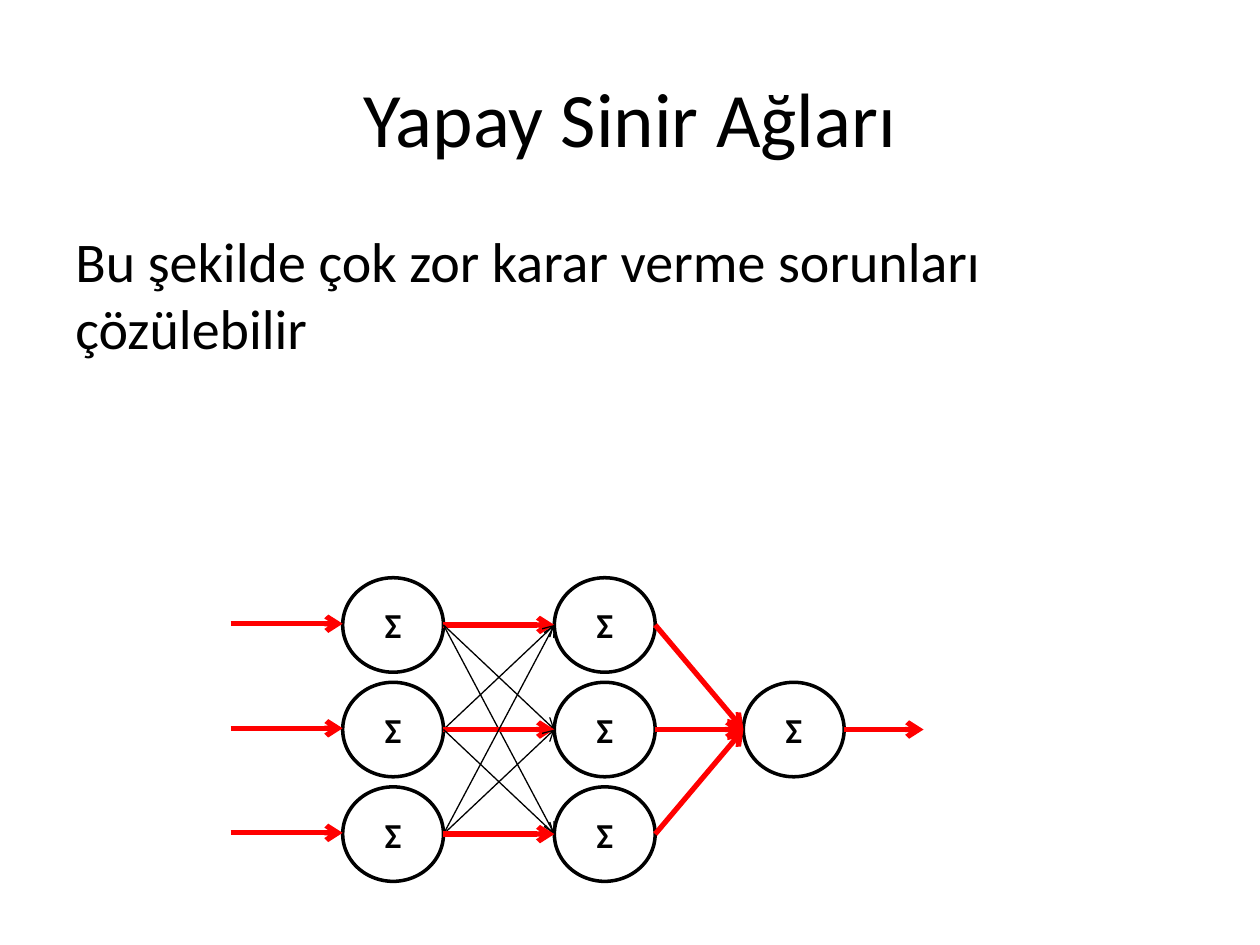
from dataclasses import dataclass

from lxml import etree
from pptx import Presentation
from pptx.dml.color import RGBColor
from pptx.enum import shapes, text
from pptx.oxml import ns
from pptx.util import Inches, Pt


@dataclass(frozen=True)
class Theme:
    font: str = "Calibri"
    ink: RGBColor = RGBColor(0, 0, 0)
    paper: RGBColor = RGBColor(255, 255, 255)
    signal: RGBColor = RGBColor(255, 0, 0)
    title: Pt = Pt(44)
    body: Pt = Pt(32)
    node: Pt = Pt(20)
    outline: Pt = Pt(2)
    thin: Pt = Pt(0.75)
    thick: Pt = Pt(3)


theme = Theme()


def write(sp, content, size, align, anchor, bold=False):
    tf = sp.text_frame
    tf.word_wrap = True
    tf.vertical_anchor = anchor
    p = tf.paragraphs[0]
    p.text = content
    p.alignment = align
    p.font.name, p.font.size, p.font.bold = theme.font, size, bold
    p.font.color.rgb = theme.ink


def arrow(x1, y1, x2, y2, strong=True):
    c = s.shapes.add_connector(shapes.MSO_CONNECTOR.STRAIGHT,
                               Inches(x1), Inches(y1), Inches(x2), Inches(y2))
    c.line.color.rgb = theme.signal if strong else theme.ink
    c.line.width = theme.thick if strong else theme.thin
    etree.SubElement(c.line._get_or_add_ln(), ns.qn("a:tailEnd"), type="arrow")
    etree.SubElement(c._element.spPr, ns.qn("a:effectLst"))


prs = Presentation()
prs.slide_width, prs.slide_height = Inches(10), Inches(7.5)
s = prs.slides.add_slide(prs.slide_layouts[6])

# Title and statement
sp = s.shapes.add_textbox(Inches(0.5), Inches(0.3), Inches(9), Inches(1.25))
write(sp, "Yapay Sinir Ağları", theme.title,
      text.PP_ALIGN.CENTER, text.MSO_ANCHOR.MIDDLE)
sp = s.shapes.add_textbox(Inches(0.5), Inches(1.75), Inches(9), Inches(2.58))
write(sp, "Bu şekilde çok zor karar verme sorunları çözülebilir", theme.body,
      text.PP_ALIGN.LEFT, text.MSO_ANCHOR.TOP)

# Network geometry: left edge of each layer and centre line of each row
node_w, node_h = 0.8, 0.75
input_x, hidden_x, output_x = 2.72, 4.4, 5.9
rows = [4.96 + 0.83 * i for i in range(3)]
middle = rows[1]

# Neurons
nodes = [(x, y) for x in (input_x, hidden_x) for y in rows]
for x, y in nodes + [(output_x, middle)]:
    sp = s.shapes.add_shape(shapes.MSO_SHAPE.OVAL, Inches(x),
                            Inches(y - node_h / 2), Inches(node_w), Inches(node_h))
    sp.shadow.inherit = False
    sp.fill.solid()
    sp.fill.fore_color.rgb = theme.paper
    sp.line.color.rgb = theme.ink
    sp.line.width = theme.outline
    write(sp, "Σ", theme.node, text.PP_ALIGN.CENTER,
          text.MSO_ANCHOR.MIDDLE, bold=True)

# Links between the layers; straight-across links are emphasised
for start in rows:
    for end in rows:
        arrow(input_x + node_w, start, hidden_x, end, strong=start == end)
for y in rows:
    arrow(hidden_x + node_w, y, output_x, middle)

# Network output and inputs
arrow(output_x + node_w, middle, 7.33, middle)
for y in rows:
    arrow(1.83, y - 0.01, input_x, y - 0.01)

prs.save("out.pptx")
